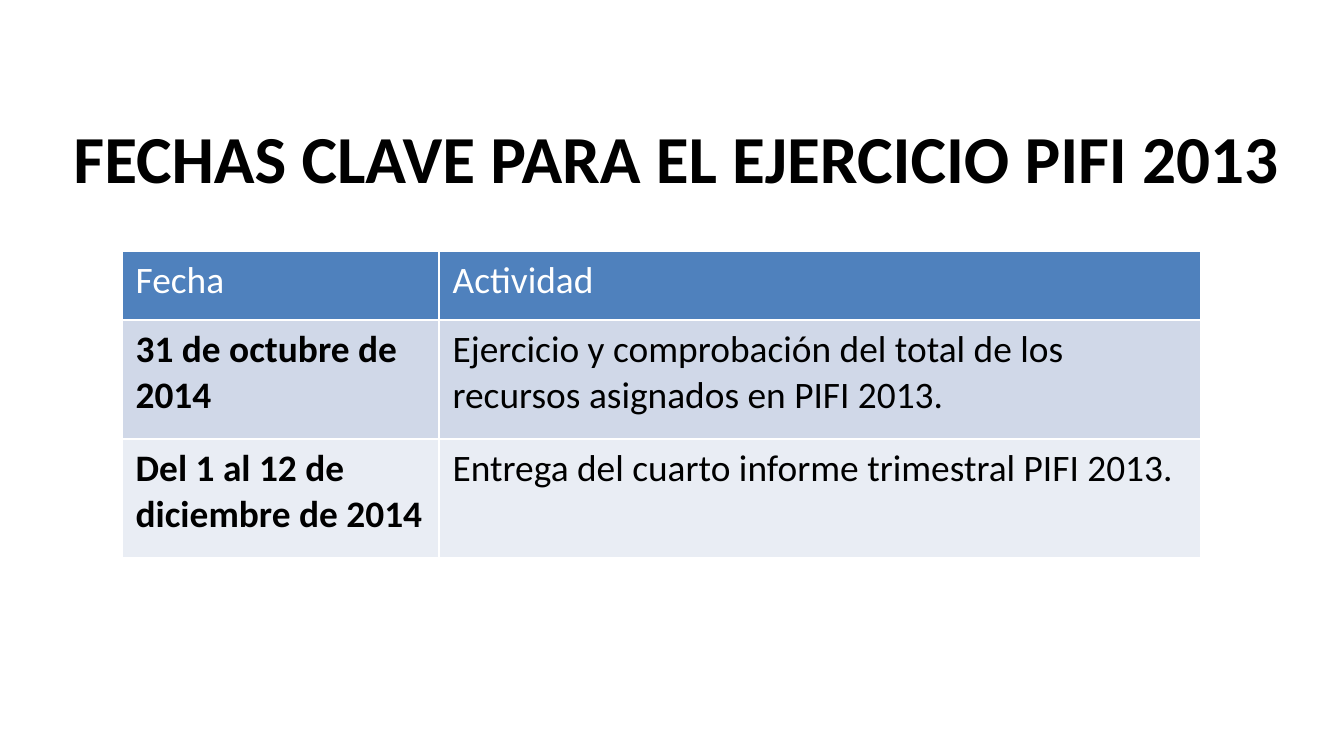
from lxml.etree import SubElement
from pptx import Presentation
from pptx.dml.color import RGBColor
from pptx.enum.text import MSO_ANCHOR as Anchor, PP_ALIGN as Align
from pptx.oxml.ns import qn
from pptx.util import Cm, Pt


def color(value):
    return RGBColor.from_string(value)


class DatesPage:
    font = "Calibri"
    black, white = "000000", "FFFFFF"
    header_fill = "4F81BD"
    band_fills = ("D0D8E8", "E9EDF4")
    border_width = Pt(1)

    def __init__(self, deck):
        self.page = deck.slides.add_slide(deck.slide_layouts[6])

    def add_span(self, para, text, size, ink, bold):
        span = para.add_run()
        span.text = text
        span.font.name = self.font
        span.font.size = Pt(size)
        span.font.bold = bold
        span.font.color.rgb = color(ink)

    def title(self, text, left, top, width, height):
        box = self.page.shapes.add_textbox(Cm(left), Cm(top), Cm(width), Cm(height))
        frame = box.text_frame
        frame.word_wrap = True
        frame.vertical_anchor = Anchor.MIDDLE
        frame.margin_left = frame.margin_right = 0
        para = frame.paragraphs[0]
        para.alignment = Align.CENTER
        self.add_span(para, text, 36, self.black, True)

    def borders(self, cell):
        properties = cell._tc.get_or_add_tcPr()
        for side in ("a:lnL", "a:lnR", "a:lnT", "a:lnB"):
            line = SubElement(properties, qn(side), w=str(self.border_width))
            fill = SubElement(line, qn("a:solidFill"))
            SubElement(fill, qn("a:srgbClr"), val=self.white)

    def cell(self, cell, text, fill, ink, bold):
        self.borders(cell)
        cell.fill.solid()
        cell.fill.fore_color.rgb = color(fill)
        self.add_span(cell.text_frame.paragraphs[0], text, 20, ink, bold)

    def table(self, rows, left, top, widths, heights):
        table = self.page.shapes.add_table(
            len(rows), len(widths), Cm(left), Cm(top), Cm(sum(widths)), Cm(sum(heights))
        ).table
        for column, width in zip(table.columns, widths):
            column.width = Cm(width)
        for index, (texts, height) in enumerate(zip(rows, heights)):
            table.rows[index].height = Cm(height)
            header = index == 0
            fill = self.header_fill if header else self.band_fills[(index - 1) % 2]
            ink = self.white if header else self.black
            for position, text in enumerate(texts):
                bold = not header and position == 0
                self.cell(table.cell(index, position), text, fill, ink, bold)


def main():
    deck = Presentation()
    deck.slide_width, deck.slide_height = Cm(25.4), Cm(14.29)
    page = DatesPage(deck)
    page.title("FECHAS CLAVE PARA EL EJERCICIO PIFI 2013", 1.09, 1.96, 23.39, 2)
    page.table(
        [
            ("Fecha", "Actividad"),
            (
                "31 de octubre de 2014",
                "Ejercicio y comprobación del total de los recursos asignados en PIFI 2013.",
            ),
            (
                "Del 1 al 12 de diciembre de 2014",
                "Entrega del cuarto informe trimestral PIFI 2013.",
            ),
        ],
        2.31,
        4.75,
        (5.99, 14.4),
        (1.3, 2.25, 2.25),
    )
    deck.save("out.pptx")


if __name__ == "__main__":
    main()
